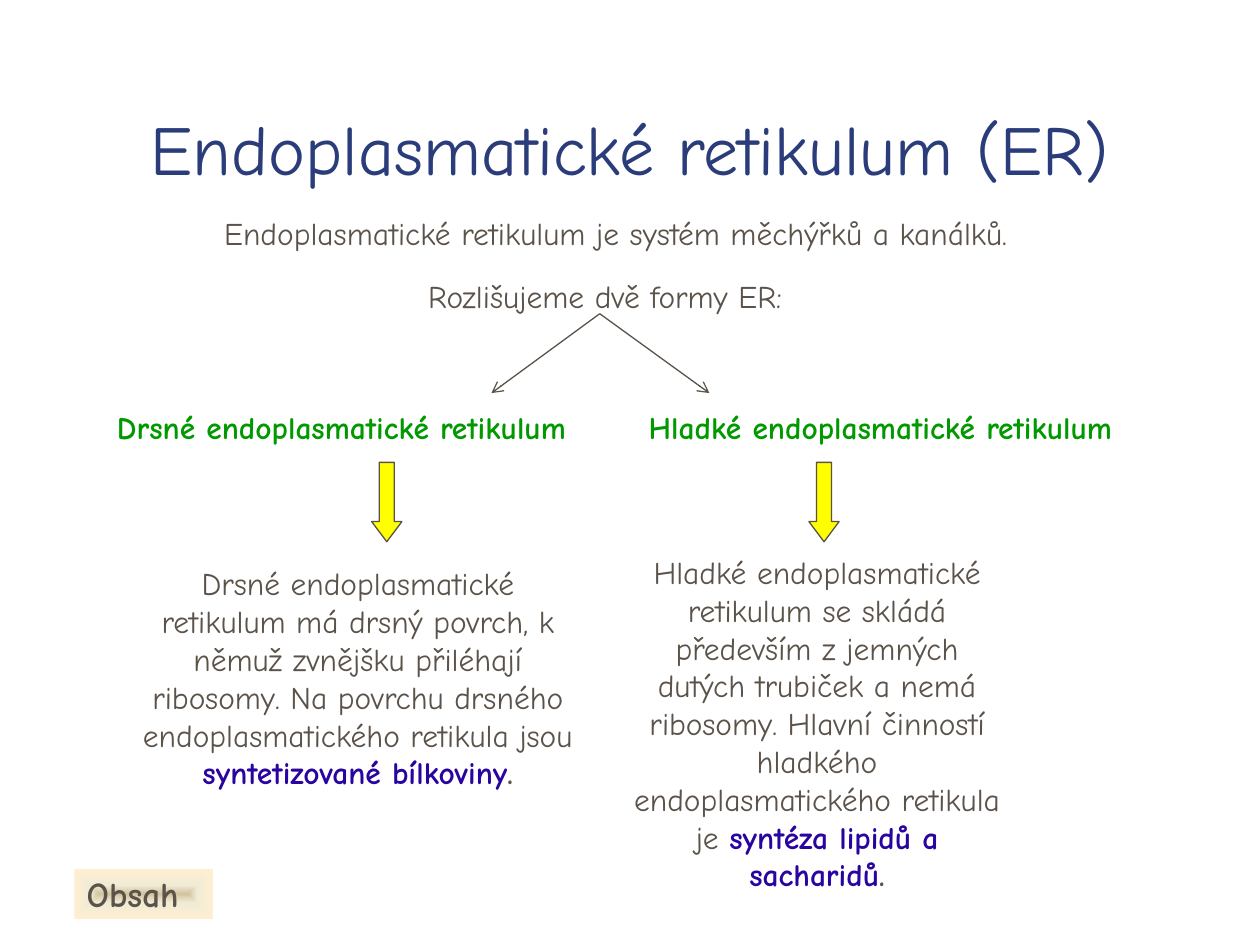
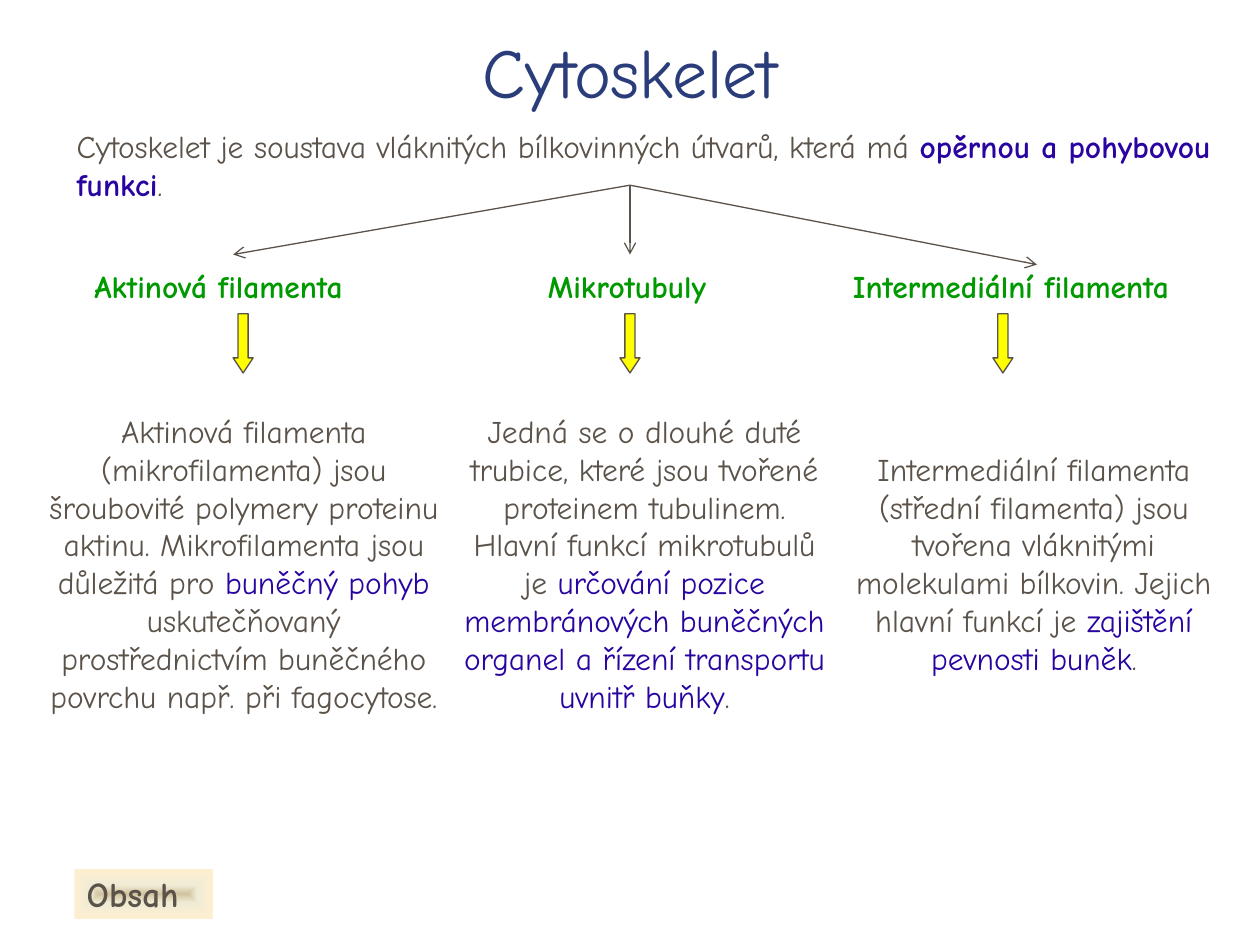
from lxml import etree
from pptx import Presentation
from pptx import util as u
from pptx.dml.color import RGBColor
from pptx.enum import shapes, text
from pptx.oxml import ns, parse_xml

COLORS = {
    "title": "2A3D7A",
    "body": "5B5249",
    "accent": "2904A0",
    "heading": "009900",
    "arrow": "FFFF00",
    "white": "FFFFFF",
}
BUTTON_STOPS = [(0, "D1C39F"), (35, "F0EBD5"), (100, "FFEFD1")]
FONT = "Comic Neue"
LINE_WIDTH = u.Pt(0.75)
TOP, MIDDLE, BOTTOM = text.MSO_ANCHOR.TOP, text.MSO_ANCHOR.MIDDLE, text.MSO_ANCHOR.BOTTOM


def color(name):
    return RGBColor.from_string(COLORS[name])


def inches(*lengths):
    return [u.Inches(length) for length in lengths]


class Deck:
    def __init__(self):
        self.presentation = Presentation()
        self.presentation.slide_width = u.Inches(10)
        self.presentation.slide_height = u.Inches(7.5)
        self.slide = None

    def new_slide(self):
        self.slide = self.presentation.slides.add_slide(self.presentation.slide_layouts[6])

    def outline(self, line, name="body"):
        line.color.rgb = color(name)
        line.width = LINE_WIDTH

    def preset(self, kind, box, fill, line=None):
        shape = self.slide.shapes.add_shape(kind, *inches(*box))
        shape.shadow.inherit = False
        shape.fill.solid()
        shape.fill.fore_color.rgb = color(fill)
        if line:
            self.outline(shape.line, line)
        else:
            shape.line.fill.background()
        return shape

    def add_runs(self, shape, runs, size=18, anchor=TOP, centered=False, wrap=True, grow=True):
        frame = shape.text_frame
        frame.word_wrap = wrap
        frame.vertical_anchor = anchor
        frame.auto_size = text.MSO_AUTO_SIZE.SHAPE_TO_FIT_TEXT if grow else text.MSO_AUTO_SIZE.NONE
        paragraph = frame.paragraphs[0]
        paragraph.alignment = text.PP_ALIGN.CENTER if centered else text.PP_ALIGN.LEFT
        for words, name, bold in runs:
            run = paragraph.add_run()
            run.text = words
            run.font.name = FONT
            run.font.size = u.Pt(size)
            run.font.bold = bold
            run.font.color.rgb = color(name)

    def text(self, box, runs, fill=None, line=None, **style):
        if fill:
            shape = self.preset(shapes.MSO_SHAPE.RECTANGLE, box, fill, line)
        else:
            shape = self.slide.shapes.add_textbox(*inches(*box))
        self.add_runs(shape, runs, **style)
        return shape

    def title(self, box, words, fill=None):
        return self.text(box, [(words, "title", False)], fill, size=40,
                         anchor=BOTTOM, centered=True, grow=False)

    def label(self, box, words, name="body", fill=None):
        self.text(box, [(words, name, name == "heading")], fill, wrap=False)

    def branches(self, start, ends):
        for end in ends:
            connector = self.slide.shapes.add_connector(
                shapes.MSO_CONNECTOR.STRAIGHT, *inches(*start, *end))
            self.outline(connector.line)
            properties = connector._element.spPr
            etree.SubElement(properties.find(ns.qn("a:ln")), ns.qn("a:tailEnd"), type="arrow")
            etree.SubElement(properties, ns.qn("a:effectLst"))

    def down_arrows(self, lefts, top, width, height, head):
        for left in lefts:
            arrow = self.preset(shapes.MSO_SHAPE.DOWN_ARROW, (left, top, width, height),
                                "arrow", "body")
            arrow.adjustments[0] = 0.5
            arrow.adjustments[1] = head

    def contents_button(self):
        button = self.preset(shapes.MSO_SHAPE.ACTION_BUTTON_CUSTOM, (0.59, 6.9, 1.1, 0.39), "white")
        stops = "".join(f'<a:gs pos="{position * 1000}"><a:srgbClr val="{value}"/></a:gs>'
                        for position, value in BUTTON_STOPS)
        gradient = parse_xml(
            f'<a:gradFill {ns.nsdecls("a")}><a:gsLst>{stops}</a:gsLst><a:path path="rect">'
            '<a:fillToRect l="50000" t="50000" r="50000" b="50000"/></a:path></a:gradFill>')
        properties = button._element.spPr
        properties.replace(properties.find(ns.qn("a:solidFill")), gradient)
        self.add_runs(button, [("Obsah", "body", True)], size=20, anchor=MIDDLE,
                      wrap=False, grow=False)


def endoplasmic_reticulum(deck):
    deck.new_slide()
    deck.title((0.75, 0.3, 8.5, 1.25), "Endoplasmatické retikulum (ER)")
    deck.down_arrows((2.95, 6.42), 3.67, 0.24, 0.63, 0.667)
    deck.text((0.99, 4.43, 3.7, 2.2), [
        ("Drsné endoplasmatické retikulum má drsný povrch, k němuž zvnějšku přiléhají "
         "ribosomy. Na povrchu drsného endoplasmatického retikula jsou ", "body", False),
        ("syntetizované bílkoviny", "accent", True),
        (".", "body", True)], centered=True)
    deck.text((4.9, 4.34, 3.17, 2.81), [
        ("Hladké endoplasmatické retikulum se skládá především z jemných dutých trubiček "
         "a nemá ribosomy. Hlavní činností hladkého endoplasmatického retikula je ", "body", False),
        ("syntéza lipidů a sacharidů", "accent", True),
        (".", "body", True)], "white", "white", centered=True)
    deck.branches((4.76, 2.49), [(3.9, 3.12), (5.63, 3.12)])
    deck.label((0.83, 3.19, 4.15, 0.4), "Drsné endoplasmatické retikulum", "heading")
    deck.label((5.05, 3.19, 4.28, 0.4), "Hladké endoplasmatické retikulum", "heading", "white")
    deck.label((3.3, 2.15, 3.28, 0.4), "Rozlišujeme dvě formy ER:")
    deck.label((1.68, 1.65, 6.91, 0.4), "Endoplasmatické retikulum je systém měchýřků a kanálků.")
    deck.contents_button()


def cytoskeleton(deck):
    deck.new_slide()
    band = deck.title((0.75, -0.03, 8.5, 0.97), "Cytoskelet", "white")
    band_color = band._element.spPr.find(ns.qn("a:solidFill"))[0]
    etree.SubElement(band_color, ns.qn("a:alpha"), val="40000")
    deck.text((0.51, 0.96, 9.49, 0.7), [
        ("Cytoskelet je soustava vláknitých bílkovinných útvarů, která má ", "body", False),
        ("opěrnou a pohybovou funkci", "accent", True),
        (".", "body", False)], anchor=MIDDLE)
    deck.branches((5, 1.47), [(1.85, 2.02), (5, 2.02), (8.23, 2.1)])
    for left, width, words in [(0.65, 2.46, "Aktinová filamenta"),
                               (4.25, 1.61, "Mikrotubuly"),
                               (6.67, 3.04, "Intermediální filamenta")]:
        deck.label((left, 2.07, width, 0.4), words, "heading")
    descriptions = [
        ((6.69, 3.37, 3.03, 2.2),
         "Intermediální filamenta (střední filamenta) jsou tvořena vláknitými molekulami "
         "bílkovin. Jejich hlavní funkcí je ",
         "zajištění pevnosti buněk", "."),
        ((3.58, 3.07, 3.07, 2.8),
         "Jedná se o dlouhé duté trubice, které jsou tvořené proteinem tubulinem. "
         "Hlavní funkcí mikrotubulů je ",
         "určování pozice membránových buněčných organel a řízení transportu uvnitř buňky", "."),
        ((0.28, 2.92, 3.31, 3.1),
         "Aktinová filamenta (mikrofilamenta) jsou šroubovité polymery proteinu aktinu. "
         "Mikrofilamenta jsou důležitá pro ",
         "buněčný pohyb",
         " uskutečňovaný prostřednictvím buněčného povrchu např. při fagocytose."),
    ]
    for box, opening, function, ending in descriptions:
        deck.text(box, [(opening, "body", False), (function, "accent", False),
                        (ending, "body", False)], anchor=MIDDLE, centered=True)
    deck.down_arrows((1.85, 4.92, 7.88), 2.49, 0.16, 0.47, 0.747)
    deck.contents_button()


def main():
    deck = Deck()
    endoplasmic_reticulum(deck)
    cytoskeleton(deck)
    deck.presentation.save("out.pptx")


if __name__ == "__main__":
    main()
